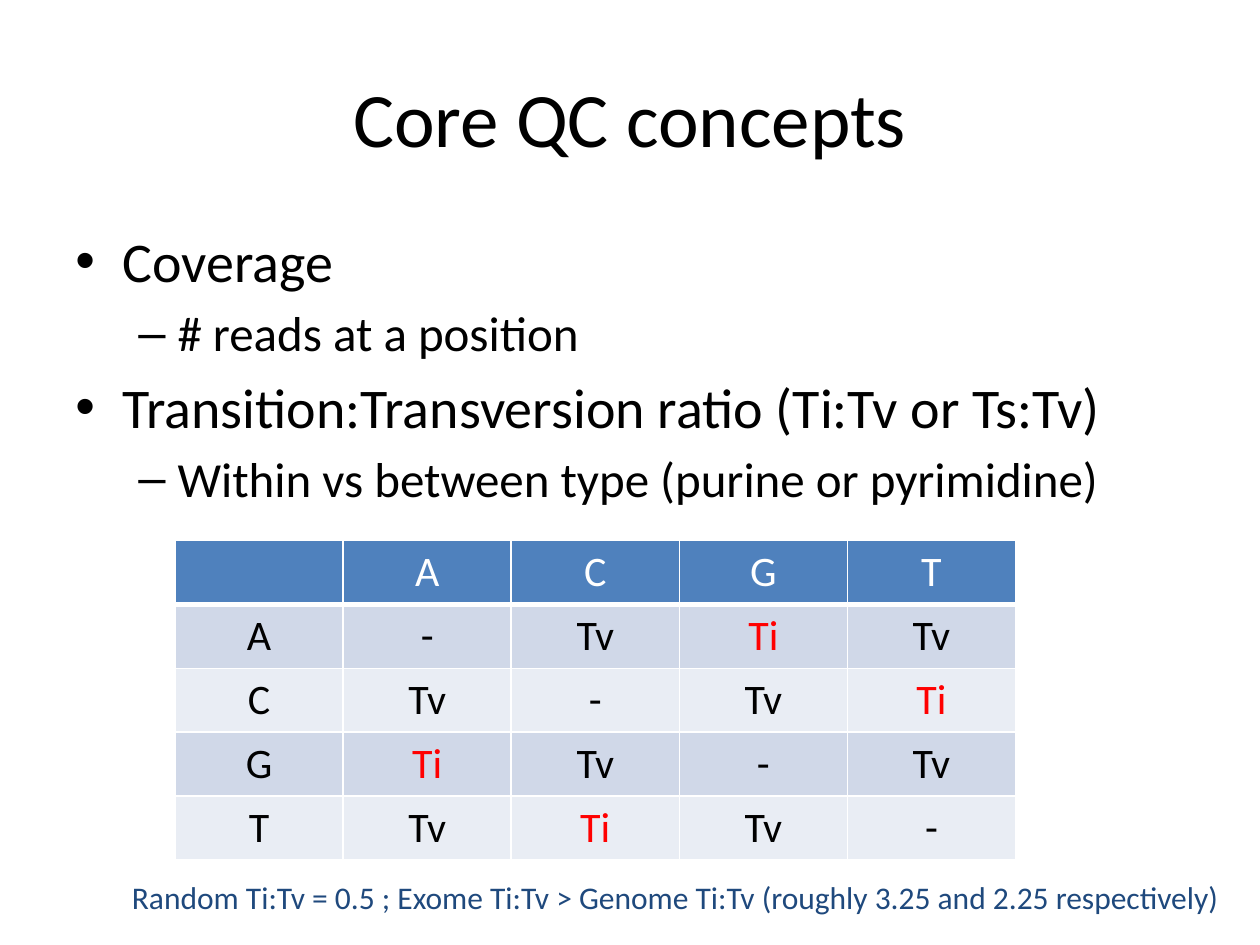
from dataclasses import dataclass

from lxml import etree
from pptx import Presentation
from pptx import util as u
from pptx.dml.color import RGBColor
from pptx.enum import text
from pptx.oxml import ns


@dataclass(frozen=True)
class Theme:
    font: str = "Calibri"
    ink: str = "000000"
    white: str = "FFFFFF"
    header: str = "4F81BD"
    bands: tuple = ("D0D8E8", "E9EDF4")
    transition: str = "FF0000"
    note: str = "1F497D"
    title_size: int = 44
    level_sizes: tuple = (32, 28)
    table_size: int = 24
    note_size: int = 18


@dataclass(frozen=True)
class Box:
    """Left, top, width and height in centimetres."""
    left: float
    top: float
    width: float
    height: float

    def lengths(self):
        return [u.Cm(n) for n in (self.left, self.top, self.width, self.height)]


THEME = Theme()
BASES = "ACGT"
TRANSITIONS = ({"A", "G"}, {"C", "T"})
# Bullet sign, text indent and hanging indent (cm), space before (pt)
LEVELS = (("•", 0.95, 0.95, 6), ("–", 2.06, 0.79, 5))
POINTS = (
    (0, "Coverage"),
    (1, "# reads at a position"),
    (0, "Transition:Transversion ratio (Ti:Tv or Ts:Tv)"),
    (1, "Within vs between type (purine or pyrimidine)"),
)


def add_span(para, words, size, color):
    span = para.add_run()
    span.text = words
    span.font.name = THEME.font
    span.font.size = u.Pt(size)
    span.font.bold = False
    span.font.color.rgb = RGBColor.from_string(color)


def place_title(page, box, words):
    title = page.shapes.title
    title.left, title.top, title.width, title.height = box.lengths()
    title.text_frame.vertical_anchor = text.MSO_ANCHOR.MIDDLE
    para = title.text_frame.paragraphs[0]
    para.alignment = text.PP_ALIGN.CENTER
    add_span(para, words, THEME.title_size, THEME.ink)


def set_bullet(para, sign, indent, hanging):
    props = para._p.get_or_add_pPr()
    props.set("marL", str(u.Cm(indent)))
    props.set("indent", str(-u.Cm(hanging)))
    etree.SubElement(props, ns.qn("a:buFont"), typeface="Arial")
    etree.SubElement(props, ns.qn("a:buChar"), char=sign)


def place_points(page, box, points):
    frame = page.shapes.add_textbox(*box.lengths()).text_frame
    frame.word_wrap = True
    for number, (level, words) in enumerate(points):
        para = frame.add_paragraph() if number else frame.paragraphs[0]
        sign, indent, hanging, space = LEVELS[level]
        para.level = level
        para.space_before = u.Pt(space)
        set_bullet(para, sign, indent, hanging)
        add_span(para, words, THEME.level_sizes[level], THEME.ink)


def set_borders(cell, bottom):
    props = cell._tc.get_or_add_tcPr()
    widths = {"a:lnL": 1, "a:lnR": 1, "a:lnT": 1, "a:lnB": bottom}
    for position, (side, width) in enumerate(widths.items()):
        line = etree.Element(ns.qn(side), w=str(u.Pt(width)))
        fill = etree.SubElement(line, ns.qn("a:solidFill"))
        etree.SubElement(fill, ns.qn("a:srgbClr"), val=THEME.white)
        props.insert(position, line)


def substitution(old, new):
    if old == new:
        return "-"
    return "Ti" if {old, new} in TRANSITIONS else "Tv"


def fill_cell(cell, words, fill, color, bottom):
    cell.fill.solid()
    cell.fill.fore_color.rgb = RGBColor.from_string(fill)
    set_borders(cell, bottom)
    para = cell.text_frame.paragraphs[0]
    para.alignment = text.PP_ALIGN.CENTER
    if words:
        add_span(para, words, THEME.table_size, color)
    else:
        para.font.size = u.Pt(THEME.table_size)


def place_substitutions(page, box):
    """Table of base changes, transitions in red."""
    rows = [["", *BASES]]
    rows += [[old, *(substitution(old, new) for new in BASES)] for old in BASES]
    count = len(rows)
    table = page.shapes.add_table(count, count, *box.lengths()).table
    for y, row in enumerate(rows):
        table.rows[y].height = u.Cm(box.height / count)
        table.columns[y].width = u.Cm(box.width / count)
        for x, words in enumerate(row):
            if y == 0:
                look = (THEME.header, THEME.white, 3)
            else:
                color = THEME.transition if words == "Ti" else THEME.ink
                look = (THEME.bands[(y - 1) % 2], color, 1)
            fill_cell(table.cell(y, x), words, *look)


def place_note(page, box, words):
    frame = page.shapes.add_textbox(*box.lengths()).text_frame
    frame.word_wrap = False
    frame.auto_size = text.MSO_AUTO_SIZE.SHAPE_TO_FIT_TEXT
    add_span(frame.paragraphs[0], words, THEME.note_size, THEME.note)


def main():
    deck = Presentation()
    deck.slide_width, deck.slide_height = u.Cm(25.4), u.Cm(19.05)
    page = deck.slides.add_slide(deck.slide_layouts[5])
    place_title(page, Box(1.27, 0.76, 22.86, 3.18), "Core QC concepts")
    place_points(page, Box(1.27, 4.45, 22.86, 12.57), POINTS)
    place_substitutions(page, Box(3.53, 10.9, 16.94, 6.43))
    place_note(
        page, Box(2.41, 17.58, 22.45, 1.02),
        "Random Ti:Tv = 0.5 ; Exome Ti:Tv > Genome Ti:Tv "
        "(roughly 3.25 and 2.25 respectively)")
    deck.save("out.pptx")


if __name__ == "__main__":
    main()
